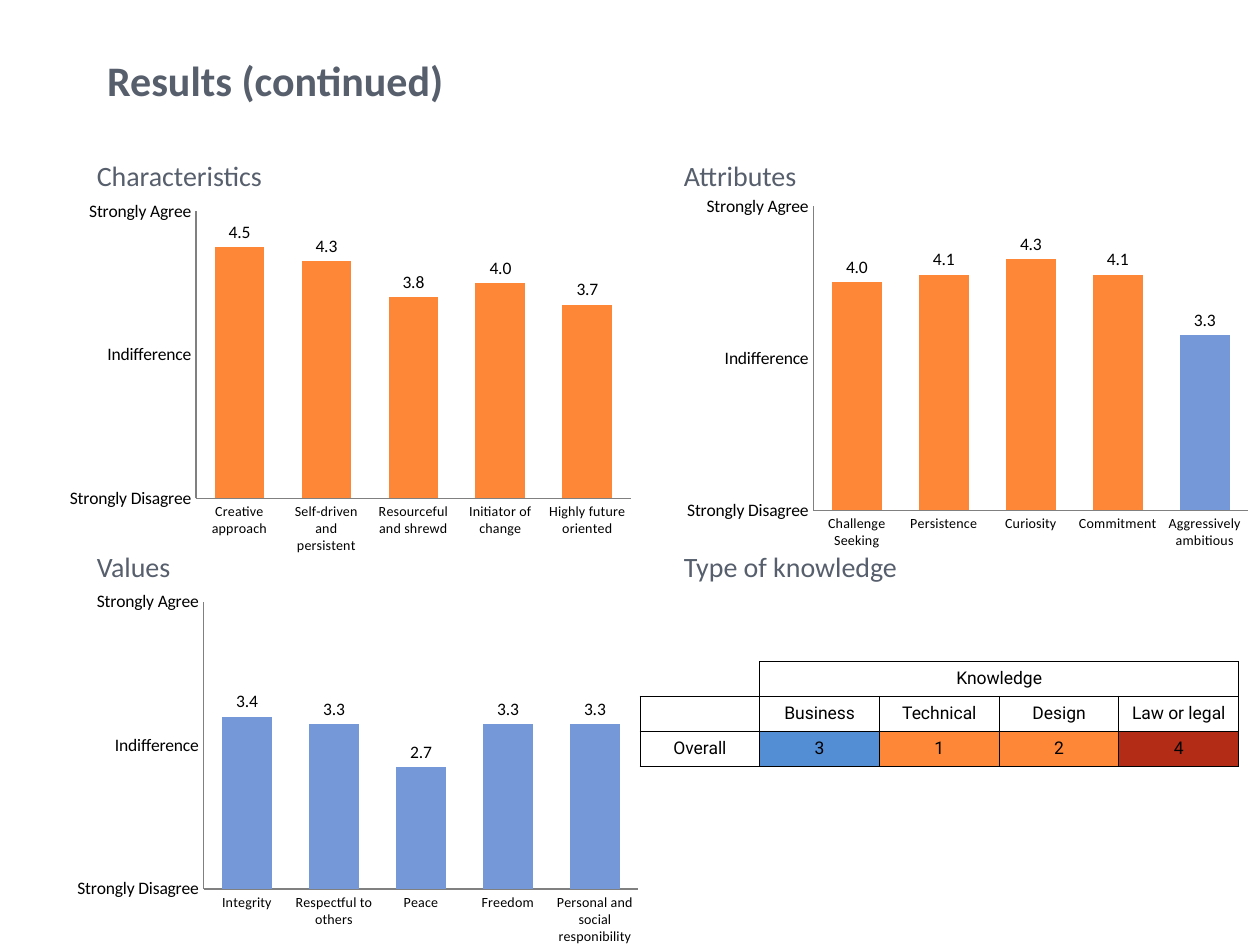
from lxml import etree
from pptx import Presentation
from pptx import util as u
from pptx.chart import data as chart_data
from pptx.dml.color import RGBColor
from pptx.enum import chart as ch, text as tx
from pptx.oxml import ns

SLATE = RGBColor(0x57, 0x5F, 0x6D)
ORANGE = RGBColor(0xFE, 0x86, 0x37)
PERIWINKLE = RGBColor(0x75, 0x98, 0xD9)
BLUE = RGBColor(0x53, 0x8E, 0xD5)
RED = RGBColor(0xB3, 0x2C, 0x16)
GRAY = RGBColor(0x80, 0x80, 0x80)
BLACK = RGBColor(0, 0, 0)
WHITE = RGBColor(255, 255, 255)
SCALE_FORMAT = r'[=1]\ "Strongly Disagree";[=3]\ \ "Indifference";\ "Strongly Agree"'

HEADINGS = [
    ("Characteristics", 0.67, 1.21), ("Attributes", 5.33, 1.21),
    ("Values", 0.67, 4.31), ("Type of knowledge", 5.33, 4.31),
]
CHARTS = [
    ((0.43, 1.54, 4.67, 2.92), ORANGE, {}, {
        "Creative approach": 4.5, "Self-driven and persistent": 4.3,
        "Resourceful and shrewd": 3.8, "Initiator of change": 4.0,
        "Highly future oriented": 3.7}),
    ((5.33, 1.5, 4.67, 2.92), ORANGE, {4: PERIWINKLE}, {
        "Challenge Seeking": 4.0, "Persistence": 4.1, "Curiosity": 4.3,
        "Commitment": 4.1, "Aggressively ambitious": 3.3}),
    ((0.49, 4.64, 4.67, 2.92), PERIWINKLE, {}, {
        "Integrity": 3.4, "Respectful to others": 3.3, "Peace": 2.7,
        "Freedom": 3.3, "Personal and social responibility": 3.3}),
]
KNOWLEDGE = [
    ["", "Knowledge", "", "", ""],
    ["", "Business", "Technical", "Design", "Law or legal"],
    ["Overall", "3", "1", "2", "4"],
]
RANK_FILLS = {"1": ORANGE, "2": ORANGE, "3": BLUE, "4": RED}


def inches(box):
    """Turn a tuple of numbers into lengths."""
    return [u.Inches(value) for value in box]


def style_font(font, size, color=BLACK, name="Calibri", bold=False):
    """Set the face, size, colour and weight of a font."""
    font.name, font.size, font.bold = name, u.Pt(size), bold
    font.color.rgb = color


def write_text(frame, words, align=tx.PP_ALIGN.LEFT, **style):
    """Write one formatted paragraph into a text frame."""
    para = frame.paragraphs[0]
    para.alignment = align
    span = para.add_run()
    span.text = words
    style_font(span.font, **style)


def place_title(page, box, words):
    """Move and fill the title placeholder."""
    title = page.shapes.title
    title.left, title.top, title.width, title.height = inches(box)
    title.text_frame.vertical_anchor = tx.MSO_ANCHOR.MIDDLE
    write_text(title.text_frame, words, size=24, color=SLATE, bold=True)


def add_heading(page, box, words):
    """Add the heading of one quadrant."""
    frame = page.shapes.add_textbox(*inches(box)).text_frame
    frame.word_wrap = True
    frame.auto_size = tx.MSO_AUTO_SIZE.SHAPE_TO_FIT_TEXT
    write_text(frame, words, size=16, color=SLATE)


def add_rating_chart(page, box, color, point_colors, ratings):
    """Add a column chart of ratings on the agreement scale."""
    data = chart_data.CategoryChartData(number_format="0.0")
    data.categories = list(ratings)
    data.add_series("Series 1", list(ratings.values()))
    chart = page.shapes.add_chart(
        ch.XL_CHART_TYPE.COLUMN_CLUSTERED, *inches(box), data).chart
    chart.has_legend = chart.has_title = False
    style_font(chart.font, 10)
    for axis, size in ((chart.category_axis, 8), (chart.value_axis, 10)):
        axis.has_major_gridlines = False
        axis.major_tick_mark = axis.minor_tick_mark = ch.XL_TICK_MARK.NONE
        axis.format.line.color.rgb = GRAY
        axis.format.line.width = u.Pt(0.75)
        style_font(axis.tick_labels.font, size)
    scale = chart.value_axis
    scale.minimum_scale, scale.maximum_scale, scale.major_unit = 1, 5, 2
    scale.tick_labels.number_format = SCALE_FORMAT
    scale.tick_labels.number_format_is_linked = False
    plot = chart.plots[0]
    plot.gap_width, plot.vary_by_categories = 75, False
    plot.has_data_labels = True
    labels = plot.data_labels
    labels.show_value = True
    labels.number_format, labels.number_format_is_linked = "0.0", False
    labels.position = ch.XL_LABEL_POSITION.OUTSIDE_END
    style_font(labels.font, 10)
    series = plot.series[0]
    targets = [(series, color)]
    targets += [(series.points[i], shade) for i, shade in point_colors.items()]
    for target, shade in targets:
        target.format.fill.solid()
        target.format.fill.fore_color.rgb = shade


def set_borders(cell, visible):
    """Draw the named sides of a cell and clear the others."""
    properties = cell._tc.get_or_add_tcPr()
    for side in "LRTB":
        line = etree.SubElement(properties, ns.qn(f"a:ln{side}"), w=str(u.Pt(0.5)))
        if side in visible:
            fill = etree.SubElement(line, ns.qn("a:solidFill"))
            etree.SubElement(fill, ns.qn("a:srgbClr"), val=str(BLACK))
        else:
            etree.SubElement(line, ns.qn("a:noFill"))


def add_knowledge_table(page, box, rows):
    """Add the ranking table with one heading over its value columns."""
    table = page.shapes.add_table(len(rows), len(rows[0]), *inches(box)).table
    table.first_row = table.horz_banding = False
    for r, row in enumerate(rows):
        for c, words in enumerate(row):
            cell = table.cell(r, c)
            cell.margin_left = cell.margin_right = 0
            cell.margin_top = cell.margin_bottom = 0
            cell.vertical_anchor = tx.MSO_ANCHOR.MIDDLE
            set_borders(cell, "RB" if r == c == 0 else "LRTB")
            cell.fill.solid()
            cell.fill.fore_color.rgb = RANK_FILLS.get(words, WHITE)
            if words:
                write_text(cell.text_frame, words, align=tx.PP_ALIGN.CENTER,
                           size=10, name="Roboto")
            else:
                para = cell.text_frame.paragraphs[0]
                etree.SubElement(para._p, ns.qn("a:endParaRPr"), sz="1000")
    table.cell(0, 1).merge(table.cell(0, len(rows[0]) - 1))


def main():
    """Build and save the results slide."""
    deck = Presentation()
    deck.slide_width, deck.slide_height = inches((10, 7.5))
    page = deck.slides.add_slide(deck.slide_layouts[5])
    place_title(page, (0.75, 0.17, 9, 0.92), "Results (continued)")
    for words, left, top in HEADINGS:
        add_heading(page, (left, top, 5, 0.37), words)
    for box, color, point_colors, ratings in CHARTS:
        add_rating_chart(page, box, color, point_colors, ratings)
    add_knowledge_table(page, (5.08, 5.25, 4.75, 0.83), KNOWLEDGE)
    deck.save("out.pptx")


if __name__ == "__main__":
    main()
